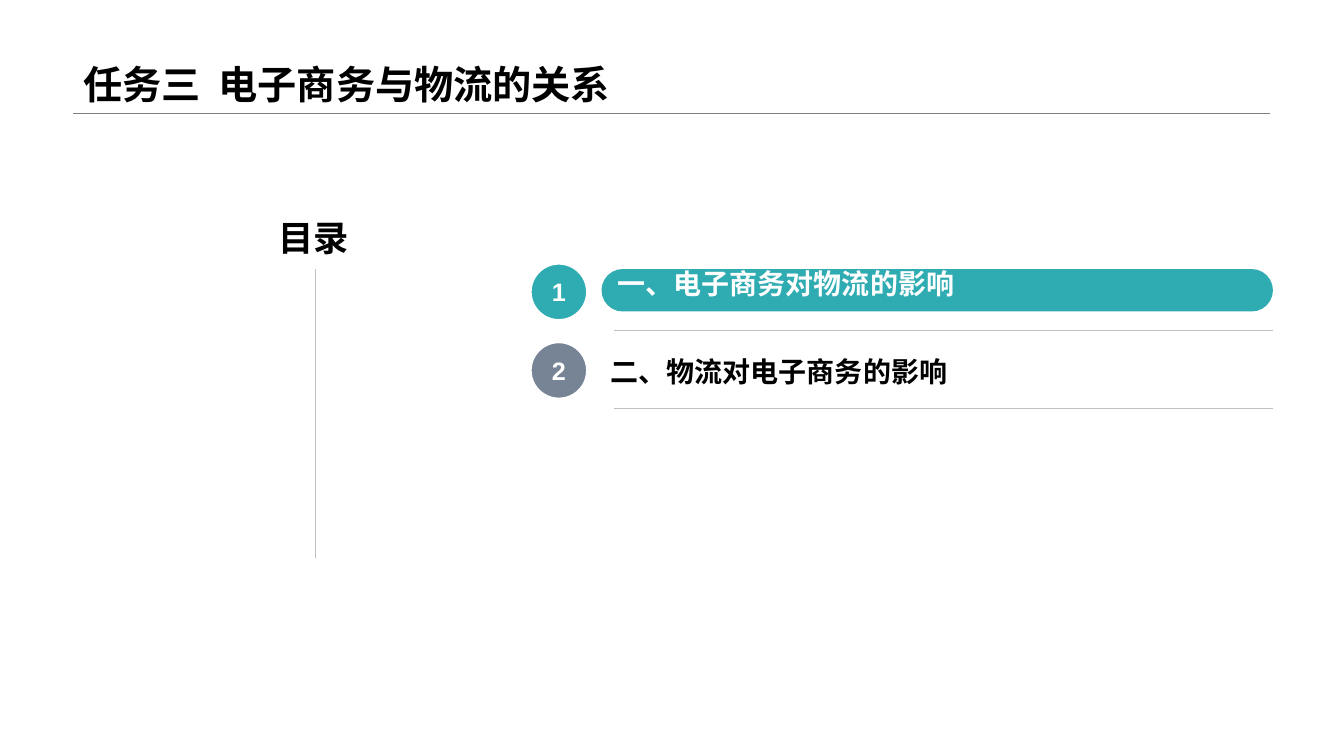
import pptx
import pptx.dml.color
import pptx.enum.shapes
import pptx.enum.text
import pptx.oxml.ns
import pptx.util
from lxml import etree

Cm = pptx.util.Cm
Pt = pptx.util.Pt
RGBColor = pptx.dml.color.RGBColor
Shape = pptx.enum.shapes.MSO_SHAPE
Anchor = pptx.enum.text.MSO_ANCHOR
Align = pptx.enum.text.PP_ALIGN

TEAL = RGBColor(0x2F, 0xAC, 0xB2)
SLATE = RGBColor(0x77, 0x84, 0x95)
GRAY = RGBColor(0x80, 0x80, 0x80)
SILVER = RGBColor(0xBF, 0xBF, 0xBF)
WHITE = RGBColor(0xFF, 0xFF, 0xFF)
BLACK = RGBColor(0x00, 0x00, 0x00)

ENTRY_PITCH = 1.98
RIGHT_EDGE = 32.08


def write_text(box, text, size, color, anchor, align=Align.LEFT, spacing=None):
    frame = box.text_frame
    frame.word_wrap = True
    frame.auto_size = pptx.enum.text.MSO_AUTO_SIZE.NONE
    frame.vertical_anchor = anchor
    para = frame.paragraphs[0]
    para.alignment = align
    para.line_spacing = spacing
    span = para.add_run()
    span.text = text
    span.font.name = "Arial"
    span.font.size = Pt(size)
    span.font.bold = True
    span.font.color.rgb = color


def add_line(page, start, end, color):
    line = page.shapes.add_connector(
        pptx.enum.shapes.MSO_CONNECTOR.STRAIGHT,
        *(Cm(value) for value in start + end))
    line.line.color.rgb = color
    line.line.width = Pt(0.25)
    etree.SubElement(line._element.spPr, pptx.oxml.ns.qn("a:effectLst"))


def add_filled(page, kind, area, fill):
    """Add a preset shape without shadow or outline; area is in centimetres."""
    box = page.shapes.add_shape(kind, *(Cm(value) for value in area))
    box.shadow.inherit = False
    box.fill.solid()
    box.fill.fore_color.rgb = fill
    box.line.fill.background()
    return box


def add_title(page, text):
    title = page.shapes.title
    title.left, title.top = Cm(1.85), Cm(0)
    title.width, title.height = Cm(30.15), Cm(2.84)
    write_text(title, text, 28, BLACK, Anchor.BOTTOM, spacing=0.9)
    add_line(page, (1.85, 2.84), (32, 2.84), GRAY)


def add_contents_heading(page, text):
    add_line(page, (7.95, 5.46), (7.95, 14.05), SILVER)
    heading = add_filled(page, Shape.RECTANGLE, (4.19, 5.33, 4.85, 1.45), WHITE)
    write_text(heading, text, 25.2, BLACK, Anchor.TOP, Align.RIGHT)


def add_entry_marker(page, index, color):
    """Add the numbered circle of an entry and the rule below it."""
    offset = index * ENTRY_PITCH
    circle = add_filled(page, Shape.OVAL, (13.36, 6.63 + offset, 1.45, 1.45), color)
    circle.line.color.rgb = WHITE
    circle.line.width = Pt(2.25)
    write_text(circle, str(index + 1), 18, WHITE, Anchor.MIDDLE, Align.CENTER)
    rule_top = 8.31 + offset
    add_line(page, (15.47, rule_top), (RIGHT_EDGE, rule_top), SILVER)


def add_current_entry(page, text):
    bar = add_filled(page, Shape.ROUNDED_RECTANGLE, (15.16, 6.78, 16.92, 1.07), TEAL)
    bar.adjustments[0] = 0.5
    write_text(bar, text, 20, WHITE, Anchor.BOTTOM, spacing=1.1)


def add_plain_entry(page, text):
    box = page.shapes.add_textbox(Cm(15.14), Cm(8.84), Cm(16.92), Cm(1.07))
    write_text(box, text, 20, BLACK, Anchor.BOTTOM)


def main():
    deck = pptx.Presentation()
    deck.slide_width, deck.slide_height = Cm(33.87), Cm(19.05)
    page = deck.slides.add_slide(deck.slide_layouts.get_by_name("Title Only"))
    add_title(page, "任务三  电子商务与物流的关系")
    for index, color in enumerate((TEAL, SLATE)):
        add_entry_marker(page, index, color)
    add_contents_heading(page, "目录")
    add_current_entry(page, "一、电子商务对物流的影响")
    add_plain_entry(page, "二、物流对电子商务的影响")
    deck.save("out.pptx")


if __name__ == "__main__":
    main()
